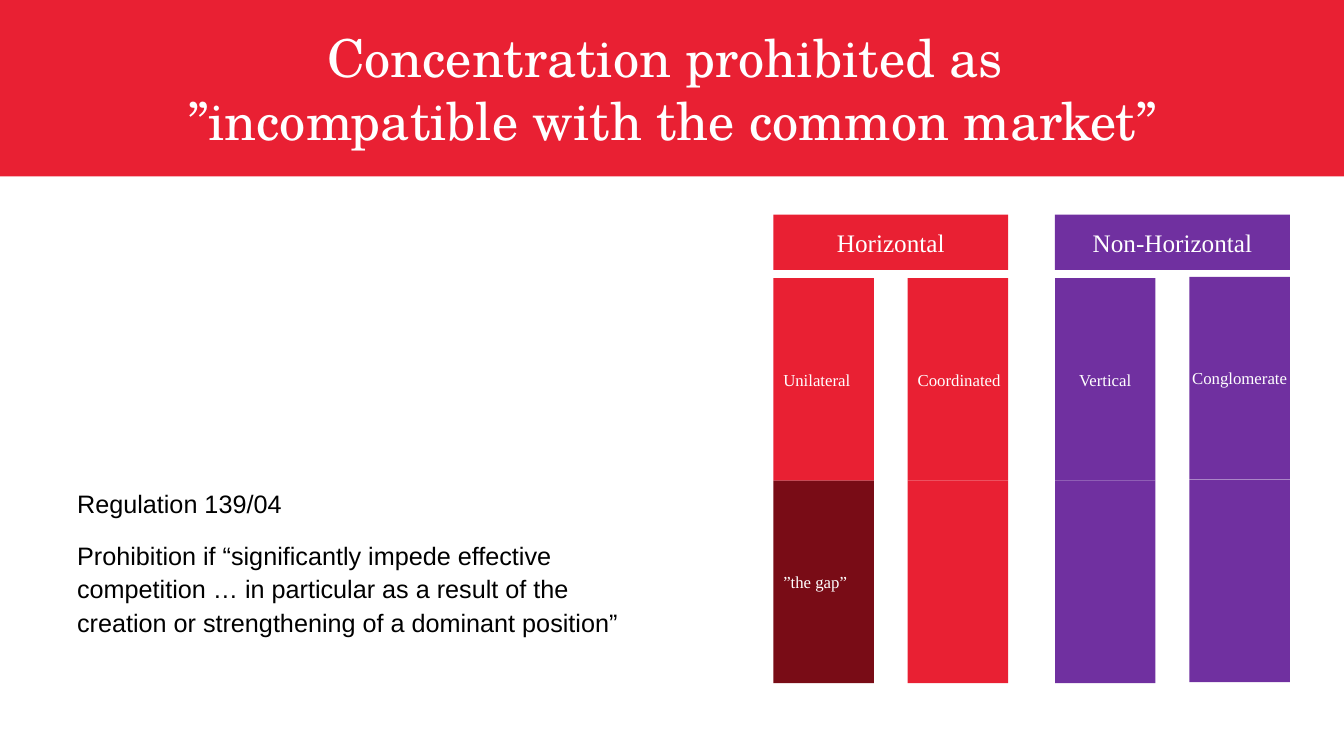
from pptx import Presentation
from pptx import util as u
from pptx.dml.color import RGBColor
from pptx.enum import shapes, text

COLORS = {
    "red": "E92033",
    "dark_red": "790C16",
    "purple": "7030A0",
    "white": "FFFFFF",
    "black": "000000",
}
SERIF = "Times New Roman"
LEFT, CENTER = text.PP_ALIGN.LEFT, text.PP_ALIGN.CENTER

SLIDE_WIDTH, SLIDE_HEIGHT = 960, 540
COLUMN_WIDTH, COLUMN_STEP = 71.8, 96
HEADER_TOP, HEADER_HEIGHT = 153.4, 39.4
COLUMN_TOP, CELL_HEIGHT = 198.6, 144.7

EFFECTS = [
    ("Horizontal", "red", 552.4, [
        ("Unilateral", "”the gap”", "dark_red", LEFT, 0),
        ("Coordinated", "", "red", LEFT, 0),
    ]),
    ("Non-Horizontal", "purple", 753.6, [
        ("Vertical", "", "purple", CENTER, 0),
        ("Conglomerate", "", "purple", CENTER, -0.8),
    ]),
]
REGULATION = [
    "Regulation 139/04",
    "Prohibition if “significantly impede effective competition … in particular "
    "as a result of the creation or strengthening of a dominant position”",
]


def add_run(paragraph, wording, size, font, color):
    run = paragraph.add_run()
    run.text = wording
    run.font.size = u.Pt(size)
    run.font.name = font
    run.font.color.rgb = RGBColor.from_string(COLORS[color])


def add_block(slide, box, color, label="", size=12, align=CENTER):
    block = slide.shapes.add_shape(
        shapes.MSO_SHAPE.RECTANGLE, *(u.Pt(length) for length in box))
    block.shadow.inherit = False
    block.fill.solid()
    block.fill.fore_color.rgb = RGBColor.from_string(COLORS[color])
    block.line.fill.background()
    if label:
        frame = block.text_frame
        frame.word_wrap = False
        frame.vertical_anchor = text.MSO_ANCHOR.MIDDLE
        paragraph = frame.paragraphs[0]
        paragraph.alignment = align
        add_run(paragraph, label, size, SERIF, "white")
    return block


def add_title(slide, lines):
    band = add_block(slide, (0, 0, SLIDE_WIDTH, 126), "red")
    title = slide.shapes.title
    title.element.addprevious(band.element)
    title.left, title.top = u.Pt(48), u.Pt(18)
    title.width, title.height = u.Pt(864.7), u.Pt(90)
    frame = title.text_frame
    frame.word_wrap = True
    frame.auto_size = text.MSO_AUTO_SIZE.NONE
    frame.vertical_anchor = text.MSO_ANCHOR.MIDDLE
    paragraph = frame.paragraphs[0]
    paragraph.alignment = CENTER
    for index, line in enumerate(lines):
        if index:
            paragraph.add_line_break()
        add_run(paragraph, line, 37.3, "TeX Gyre Schola", "white")


def add_regulation(slide, statements):
    regulation = slide.shapes.add_textbox(
        u.Pt(48), u.Pt(343.4), u.Pt(408), u.Pt(129))
    frame = regulation.text_frame
    frame.word_wrap = True
    for index, statement in enumerate(statements):
        paragraph = frame.add_paragraph() if index else frame.paragraphs[0]
        paragraph.line_spacing = 1.1
        paragraph.space_before = u.Pt(10.5)
        paragraph.space_after = u.Pt(2.6)
        add_run(paragraph, statement, 18, "Arial", "black")


def add_effect_group(slide, heading, color, left, columns):
    header_width = COLUMN_STEP + COLUMN_WIDTH
    add_block(slide, (left, HEADER_TOP, header_width, HEADER_HEIGHT),
              color, heading, 18)
    for index, (upper, lower, lower_color, align, shift) in enumerate(columns):
        x = left + index * COLUMN_STEP
        cells = [(upper, color), (lower, lower_color)]
        for row, (label, fill) in enumerate(cells):
            y = COLUMN_TOP + shift + row * CELL_HEIGHT
            add_block(slide, (x, y, COLUMN_WIDTH, CELL_HEIGHT),
                      fill, label, align=align)


def main():
    deck = Presentation()
    deck.slide_width, deck.slide_height = u.Pt(SLIDE_WIDTH), u.Pt(SLIDE_HEIGHT)
    slide = deck.slides.add_slide(deck.slide_layouts.get_by_name("Title Only"))
    add_title(slide, ["Concentration prohibited as ",
                      "”incompatible with the common market”"])
    add_regulation(slide, REGULATION)
    for group in EFFECTS:
        add_effect_group(slide, *group)
    deck.save("out.pptx")


if __name__ == "__main__":
    main()
